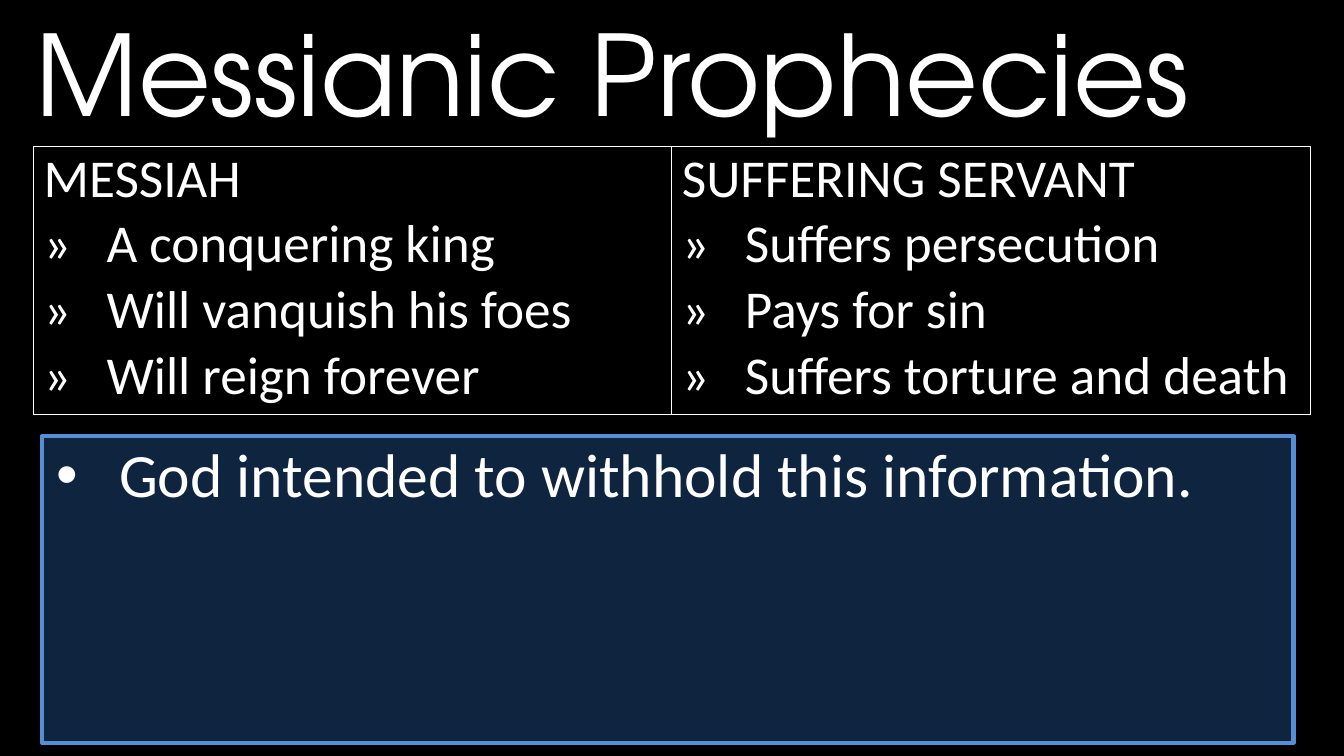
from dataclasses import dataclass

from lxml import etree
from pptx import Presentation
from pptx import util as u
from pptx.dml.color import RGBColor
from pptx.enum import shapes, text
from pptx.oxml import ns

Pt = u.Pt


@dataclass(frozen=True)
class Theme:
    back: str = "000000"
    ink: str = "FFFFFF"
    navy: str = "0F243E"
    edge: str = "558ED5"
    head: str = "TeX Gyre Adventor"
    body: str = "Calibri"
    title: int = 80
    list: int = 38
    note: int = 44


THEME = Theme()
HANG = 45  # hanging indent of every list line


def rgb(code):
    return RGBColor.from_string(code)


def add_box(slide, area, line, width, fill=None):
    """Outlined rectangle, filled when a colour is given."""
    box = slide.shapes.add_shape(shapes.MSO_SHAPE.RECTANGLE, *map(Pt, area))
    box.shadow.inherit = False
    box.line.color.rgb = rgb(line)
    box.line.width = Pt(width)
    if fill:
        box.fill.solid()
        box.fill.fore_color.rgb = rgb(fill)
    else:
        box.fill.background()
    return box


def add_label(slide, area):
    return slide.shapes.add_textbox(*map(Pt, area))


def indent(para, hang, bullet):
    """Hanging indent, with an optional bullet character."""
    props = para._p.get_or_add_pPr()
    props.set("marL", str(Pt(hang)))
    props.set("indent", str(-Pt(hang)))
    if bullet:
        font = etree.SubElement(props, ns.qn("a:buFont"))
        font.set("typeface", "Arial")
        etree.SubElement(props, ns.qn("a:buChar")).set("char", bullet)


def put_text(shape, lines, size, font=THEME.body, color=THEME.ink,
             space=None, after=0, hang=0, bullet=None):
    """Fill a shape with one paragraph for each line."""
    frame = shape.text_frame
    frame.word_wrap = True
    frame.auto_size = text.MSO_AUTO_SIZE.SHAPE_TO_FIT_TEXT
    frame.vertical_anchor = text.MSO_ANCHOR.TOP
    for row, line in enumerate(lines):
        para = frame.add_paragraph() if row else frame.paragraphs[0]
        para.alignment = text.PP_ALIGN.LEFT
        if space:
            para.line_spacing = space
        para.space_after = Pt(after)
        if hang:
            indent(para, hang, bullet)
        run = para.add_run()
        run.text = line
        run.font.size = Pt(size)
        run.font.name = font
        run.font.color.rgb = rgb(color)


def add_column(slide, left, head, items):
    """Framed column: a heading and its marked points."""
    box = add_box(slide, (left, 104.4, 456, 191.5), THEME.ink, 0.75)
    lines = [head] + [f"»\t{item}" for item in items]
    put_text(box, lines, THEME.list, space=0.9, after=6, hang=HANG)


def main():
    deck = Presentation()
    deck.slide_width, deck.slide_height = Pt(960), Pt(540)
    slide = deck.slides.add_slide(deck.slide_layouts[6])
    slide.background.fill.solid()
    slide.background.fill.fore_color.rgb = rgb(THEME.back)

    # Title
    title = add_label(slide, (18, 0, 864, 104.4))
    put_text(title, ["Messianic Prophecies"], THEME.title, font=THEME.head)

    # Two kinds of prophecy, side by side
    add_column(slide, 24, "MESSIAH", [
        "A conquering king", "Will vanquish his foes", "Will reign forever"])
    add_column(slide, 480, "SUFFERING SERVANT", [
        "Suffers persecution", "Pays for sin", "Suffers torture and death"])

    # Panel with the conclusion
    add_box(slide, (30, 311.5, 894, 219), THEME.edge, 3, fill=THEME.navy)
    note = add_label(slide, (33, 314, 888.5, 55.4))
    put_text(note, ["God intended to withhold this information."], THEME.note,
             space=0.9, after=3, hang=HANG, bullet="•")

    deck.save("out.pptx")


if __name__ == "__main__":
    main()
